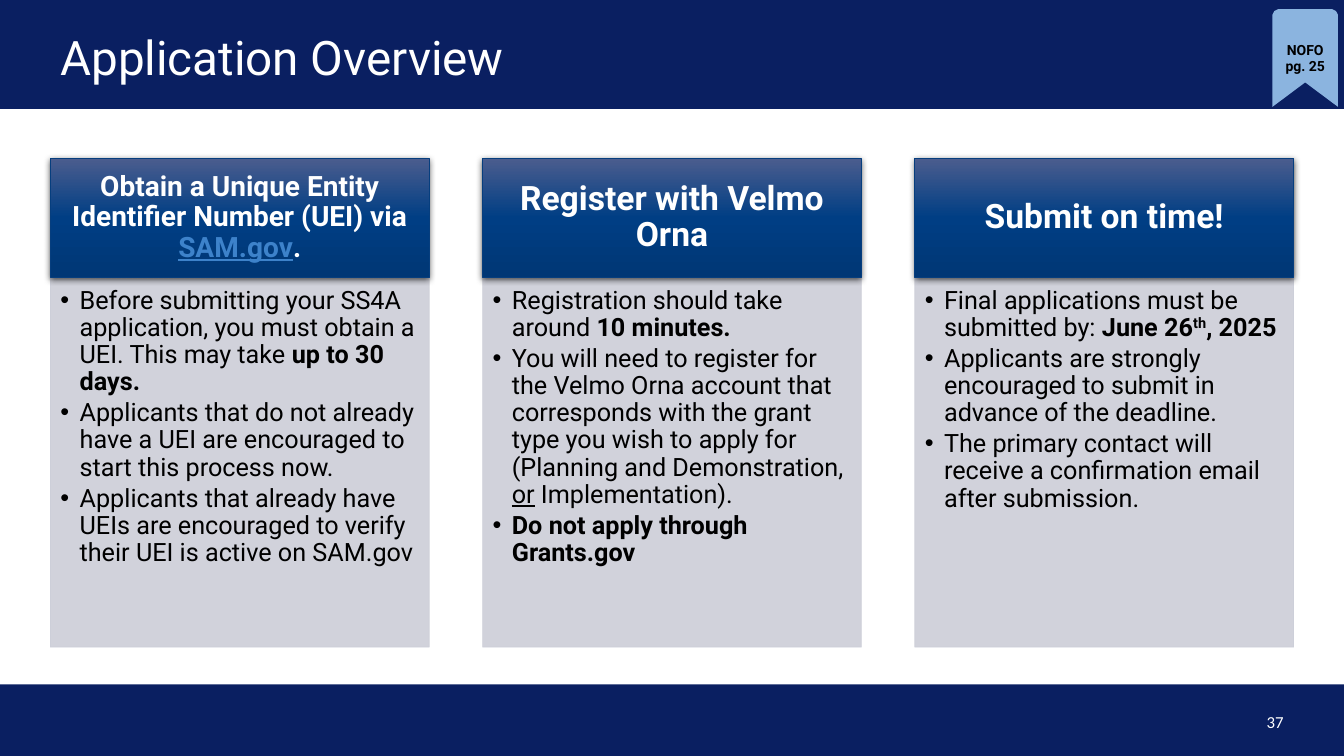
import copy

import pptx
import pptx.dml.color
import pptx.enum.shapes
import pptx.enum.text
import pptx.oxml
import pptx.oxml.ns
import pptx.util

Inch = pptx.util.Inches
Pt = pptx.util.Pt
Align = pptx.enum.text.PP_ALIGN
Anchor = pptx.enum.text.MSO_ANCHOR
RECT = pptx.enum.shapes.MSO_SHAPE.RECTANGLE
qn = pptx.oxml.ns.qn
NS = pptx.oxml.ns.nsdecls("a")

# Slide grid, in inches
WIDE, HIGH = 13.33, 7.5
EDGE, GAP, COLS = 0.5, 0.53, 3
COL = (WIDE - 2 * EDGE - (COLS - 1) * GAP) / COLS
BAND, FOOT = 1.08, 6.79
TOP, HEAD, DEEP = 1.57, 1.18, 4.85

NAVY, WHITE, BLACK = "0A1F61", "FFFFFF", "000000"
BOLD = {"bold": True}
LINK = {"color": "3D82CA", "underline": True}

CARDS = [
    {
        "size": 20, "inset": (0.16, 0.09, 0.16, 0.09),
        "head": [("Obtain a Unique Entity Identifier Number (UEI) via ", {}),
                 ("SAM.gov", LINK), (".", {})],
        "list": [
            [("Before submitting your SS4A application, you must obtain a UEI. "
              "This may take", {}), (" up to 30 days.", BOLD)],
            [("Applicants that do not already have a UEI are encouraged to "
              "start this process now.", {})],
            [("Applicants that already have UEIs are encouraged to verify "
              "their UEI is active on SAM.gov", {})],
        ],
    },
    {
        "size": 24, "inset": (0.19, 0.11, 0.19, 0.11),
        "head": [("Register with Velmo Orna", {})],
        "list": [
            [("Registration should take around ", {}), ("10 minutes.", BOLD)],
            [("You will need to register for the Velmo Orna account that "
              "corresponds with the grant type you wish to apply for "
              "(Planning and Demonstration, ", {}),
             ("or", {"underline": True}), (" Implementation).", {})],
            [("Do not apply through Grants.gov", BOLD)],
        ],
    },
    {
        "size": 24, "inset": (0.19, 0.11, 0.19, 0.11),
        "head": [("Submit on time!", {})],
        "list": [
            [("Final applications must be submitted by: ", {}),
             ("June 26", BOLD), ("th", {"bold": True, "raise": 30000}),
             (", 2025", BOLD)],
            [("Applicants are strongly encouraged to submit in advance of "
              "the deadline.", {})],
            [("The primary contact will receive a confirmation email after "
              "submission.", {})],
        ],
    },
]


def paint(part, tone):
    """Set a colour, making a fill solid first."""
    if hasattr(part, "solid"):
        part.solid()
        part = part.fore_color
    part.rgb = pptx.dml.color.RGBColor.from_string(tone)


def place(shape, box):
    for name, size in zip(("left", "top", "width", "height"), box):
        setattr(shape, name, Inch(size))


def frame(shape, anchor, inset=(0.1, 0.05, 0.1, 0.05)):
    text = shape.text_frame
    text.word_wrap = True
    text.auto_size = pptx.enum.text.MSO_AUTO_SIZE.NONE
    text.vertical_anchor = anchor
    for side, size in zip(("left", "top", "right", "bottom"), inset):
        setattr(text, "margin_" + side, Inch(size))
    return text


def write(para, runs, form, **look):
    """Fill a paragraph with runs that share a base format."""
    base = {"line_spacing": 1, "space_before": Pt(0), "space_after": Pt(0)}
    for name, value in {**base, **look}.items():
        setattr(para, name, value)
    for words, extra in runs:
        run = para.add_run()
        run.text = words
        full = {"name": "Roboto", "bold": False, **form, **extra}
        paint(run.font.color, full.pop("color"))
        lift = full.pop("raise", None)
        if lift:
            run.font._element.set("baseline", str(lift))
        for name, value in full.items():
            setattr(run.font, name, value)


def block(slide, box, tone):
    shape = slide.shapes.add_shape(RECT, *map(Inch, box))
    shape.shadow.inherit = False
    paint(shape.fill, tone)
    shape.line.fill.background()
    return shape


def bands(slide):
    """Navy bands behind the title and the page number."""
    for box in ((0, 0, WIDE, BAND), (0, FOOT, WIDE, HIGH - FOOT)):
        slide.shapes._spTree.insert(2, block(slide, box, NAVY)._element)
    note = slide.shapes.add_textbox(*map(Inch, (9.83, 7.04, 3, 0.25)))
    text = frame(note, Anchor.MIDDLE)
    write(text.paragraphs[0], [("37", {})],
          {"name": "Calibri", "size": Pt(12), "color": WHITE},
          alignment=Align.RIGHT)


def title(slide, box):
    shape = slide.shapes.title
    place(shape, box)
    write(frame(shape, Anchor.MIDDLE).paragraphs[0],
          [("Application Overview", {})], {"size": Pt(34), "color": WHITE},
          alignment=Align.LEFT, line_spacing=1.08)


def header(slide, box, card):
    """Shaded, shadowed heading of a card."""
    shape = block(slide, box, NAVY)
    shape.fill.gradient()
    shape.fill.gradient_angle = 270
    stops = shape._element.spPr.find(".//" + qn("a:gsLst"))
    stops.insert(1, copy.deepcopy(stops[0]))
    tones = ("4B5D8E", "003E84", "003775")
    for step, (stop, tone) in enumerate(zip(shape.fill.gradient_stops, tones)):
        stop.position = step / 2
        paint(stop.color, tone)
    paint(shape.line.fill, "063E7E")
    shape.line.width = Pt(0.5)
    shape._element.spPr.find(qn("a:effectLst")).append(pptx.oxml.parse_xml(
        f'<a:outerShdw {NS} blurRad="57150" dist="19050" dir="5400000" '
        'algn="ctr" rotWithShape="0"><a:srgbClr val="000000">'
        '<a:alpha val="63000"/></a:srgbClr></a:outerShdw>'))
    text = frame(shape, Anchor.MIDDLE, card["inset"])
    write(text.paragraphs[0], card["head"],
          {"size": Pt(card["size"]), "color": WHITE, "bold": True},
          alignment=Align.CENTER, line_spacing=0.9)


def points(shape, box, items):
    """Grey panel with a bulleted list."""
    place(shape, box)
    paint(shape.fill, "CCCED8")
    paint(shape.line.fill, "CCCED8")
    shape.line.width = Pt(0.5)
    for tone in shape._element.spPr.iter(qn("a:srgbClr")):
        tone.append(pptx.oxml.parse_xml(f'<a:alpha {NS} val="90000"/>'))
    text = frame(shape, Anchor.TOP, (0.1, 0.1, 0.14, 0.16))
    for row, runs in enumerate(items):
        para = text.add_paragraph() if row else text.paragraphs[0]
        props = para._p.get_or_add_pPr()
        props.set("marL", str(Inch(0.19)))
        props.set("indent", str(-Inch(0.19)))
        props.append(pptx.oxml.parse_xml(
            f'<a:buFont {NS} typeface="Arial"/>'))
        props.append(pptx.oxml.parse_xml(f'<a:buChar {NS} char="•"/>'))
        write(para, runs, {"size": Pt(18), "color": BLACK},
              alignment=Align.LEFT, line_spacing=0.9, space_after=Pt(2.7))


def ribbon(slide, box):
    """Page marker with rounded top corners and a notched foot."""
    left, top, wide, high = box
    dots = [(0, 1), (0.5, 0.75), (1, 1), (1, 0.06), (0.97, 0.02), (0.91, 0),
            (0.09, 0), (0.03, 0.02), (0, 0.06)]
    spots = [(Inch(left + x * wide), Inch(top + y * high)) for x, y in dots]
    path = slide.shapes.build_freeform(*spots[0])
    path.add_line_segments(spots[1:], close=True)
    shape = path.convert_to_shape()
    shape.shadow.inherit = False
    paint(shape.fill, "8BB4DF")
    shape.line.fill.background()
    write(frame(shape, Anchor.MIDDLE).paragraphs[0], [("NOFO pg. 25", {})],
          {"size": Pt(10), "color": BLACK, "bold": True},
          alignment=Align.CENTER)


def main():
    deck = pptx.Presentation()
    deck.slide_width, deck.slide_height = Inch(WIDE), Inch(HIGH)
    slide = deck.slides.add_slide(deck.slide_layouts.get_by_name("Comparison"))
    bands(slide)
    title(slide, (EDGE, 0, WIDE - 2 * EDGE, BAND))
    bodies = list(slide.placeholders)[1:]
    for spare in bodies[COLS:]:
        spare._element.getparent().remove(spare._element)
    for col, (body, card) in enumerate(zip(bodies, CARDS)):
        left = EDGE + col * (COL + GAP)
        points(body, (left, TOP + HEAD, COL, DEEP - HEAD), card["list"])
        header(slide, (left, TOP, COL, HEAD), card)
    ribbon(slide, (12.62, 0.09, 0.65, 0.97))
    deck.save("out.pptx")


if __name__ == "__main__":
    main()
